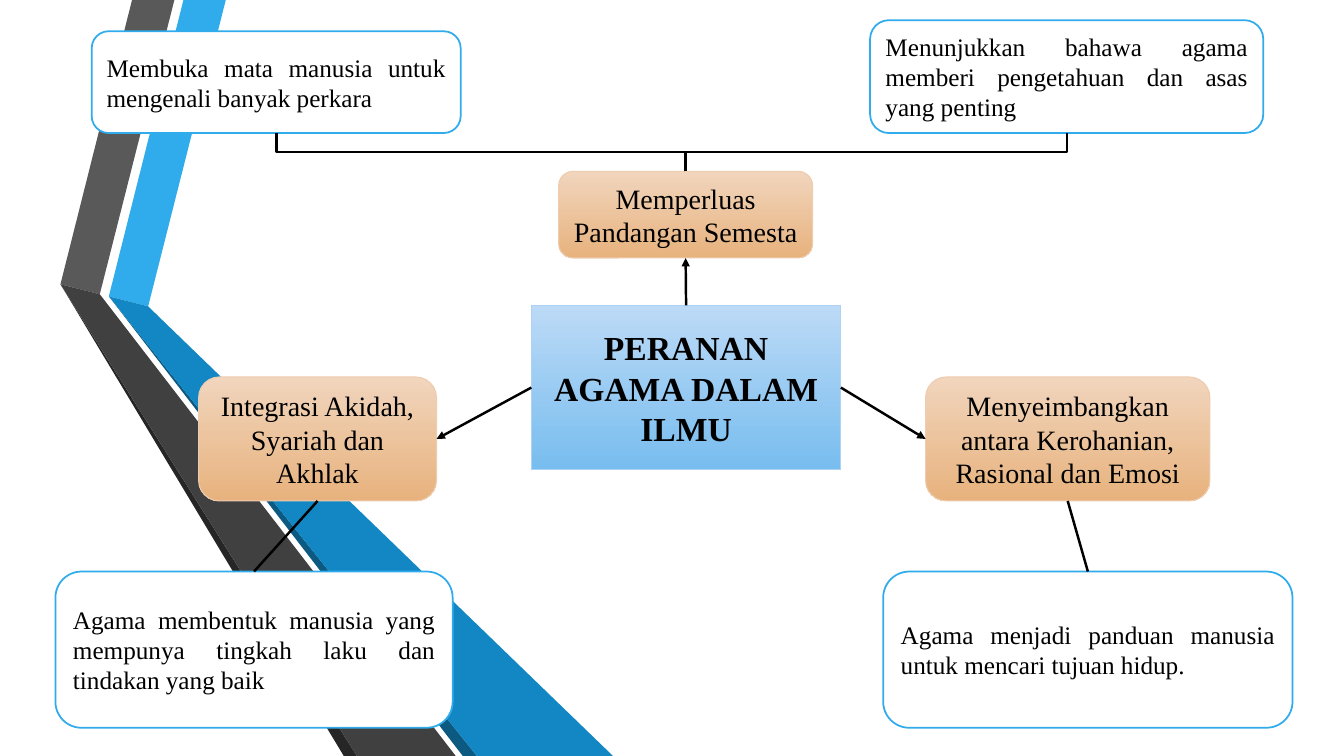
import pptx
import pptx.dml.color
import pptx.enum.shapes
import pptx.enum.text
import pptx.oxml
import pptx.oxml.ns
import pptx.util
import lxml.etree

PX = 9144
SHAPE = pptx.enum.shapes.MSO_SHAPE
LINK = pptx.enum.shapes.MSO_CONNECTOR
ALIGN = pptx.enum.text.PP_ALIGN
TOP, LEFT, BOTTOM, RIGHT = range(4)
BLACK = "000000"

RIBBONS = [
    ("30ACEC", [(108, 294), (147, 304), (224, 0), (182, 0)]),
    ("595959", [(99, 292), (173, 0), (131, 0), (60, 282)]),
    ("262626", [(60, 282), (341, 750), (354, 750)]),
    ("0C5A82", [(473, 750), (108, 294), (459, 750)]),
    ("1287C3", [(108, 294), (473, 750), (608, 750), (147, 304)]),
    ("404040", [(452, 750), (106, 301), (99, 292), (60, 282), (354, 750)]),
]

STYLES = {
    "title": {"fills": ("BCDAF6", "78BDEF"), "line": "AED2F4", "width": 0.75,
              "align": ALIGN.CENTER, "size": 24, "bold": True},
    "role": {"fills": ("F1D5BD", "E7B27D"), "line": "EECCAF", "width": 0.75,
             "align": ALIGN.CENTER, "size": 20, "bold": False},
    "detail": {"fills": ("FFFFFF",), "line": "30ACEC", "width": 1.25,
               "align": ALIGN.JUSTIFY, "size": 18, "bold": False},
}

BRANCHES = [
    ("Memperluas Pandangan Semesta", (554, 170, 252, 86), TOP, BOTTOM, TOP, BOTTOM, [
        ("Membuka mata manusia untuk mengenali banyak perkara", (91, 31, 366, 101)),
        ("Menunjukkan bahawa agama memberi pengetahuan dan asas yang penting",
         (863, 20, 390, 112)),
    ]),
    ("Integrasi Akidah, Syariah dan Akhlak", (197, 374, 236, 123), LEFT, RIGHT, BOTTOM, TOP, [
        ("Agama membentuk manusia yang mempunya tingkah laku dan tindakan yang baik",
         (55, 567, 394, 155)),
    ]),
    ("Menyeimbangkan antara Kerohanian, Rasional dan Emosi", (918, 374, 282, 123),
     RIGHT, LEFT, BOTTOM, TOP, [
        ("Agama menjadi panduan manusia untuk mencari tujuan hidup.", (876, 567, 406, 155)),
    ]),
]


def rgb(code):
    """Turn a hex string into a colour."""
    return pptx.dml.color.RGBColor.from_string(code)


def apply(obj, values):
    """Set every attribute named in a dict."""
    for name, value in values.items():
        setattr(obj, name, value)


def paint(sp, fills, line=None, width=0):
    """Fill a shape with one colour or a vertical gradient, and outline it."""
    if len(fills) == 1:
        sp.fill.solid()
        sp.fill.fore_color.rgb = rgb(fills[0])
    else:
        sp.fill.gradient()
        sp.fill.gradient_angle = 270
        for stop, code in zip(sp.fill.gradient_stops, fills):
            stop.color.rgb = rgb(code)
    if line:
        sp.line.color.rgb = rgb(line)
        sp.line.width = pptx.util.Pt(width)
    else:
        sp.line.fill.background()


def write(sp, text, style):
    """Put one styled paragraph in a shape."""
    tf = sp.text_frame
    apply(tf, {"word_wrap": True, "auto_size": pptx.enum.text.MSO_AUTO_SIZE.NONE,
               "vertical_anchor": pptx.enum.text.MSO_ANCHOR.MIDDLE})
    p = tf.paragraphs[0]
    apply(p, {"alignment": style["align"], "line_spacing": 1.0})
    r = p.add_run()
    r.text = text
    apply(r.font, {"name": "Times New Roman", "size": pptx.util.Pt(style["size"]),
                   "bold": style["bold"]})
    r.font.color.rgb = rgb(BLACK)


def decorate(sp, text, style):
    """Give a box its paint and its text."""
    paint(sp, style["fills"], style["line"], style["width"])
    write(sp, text, style)
    return sp


def add_ribbons(s):
    """Draw the folded ribbons on the left side."""
    for code, points in RIBBONS:
        fb = s.shapes.build_freeform(*points[0], scale=PX)
        fb.add_line_segments(points[1:], close=True)
        sp = fb.convert_to_shape()
        sp.shadow.inherit = False
        paint(sp, (code,))


def add_title(s, text, box):
    """Shape the title placeholder as the central document box."""
    sp = s.shapes.title
    apply(sp, dict(zip(("left", "top", "width", "height"), (v * PX for v in box))))
    geom = pptx.oxml.parse_xml(
        '<a:prstGeom %s prst="flowChartDocument"><a:avLst/></a:prstGeom>'
        % pptx.oxml.ns.nsdecls("a"))
    sp._element.spPr.insert(1, geom)
    return decorate(sp, text, STYLES["title"])


def add_box(s, text, box, style):
    """Add a rounded box with text."""
    sp = s.shapes.add_shape(SHAPE.ROUNDED_RECTANGLE, *(v * PX for v in box))
    sp.shadow.inherit = False
    return decorate(sp, text, STYLES[style])


def stand_upright(cxn):
    """Turn an elbow so that it leaves and arrives vertically."""
    dx, dy = cxn.end_x - cxn.begin_x, cxn.end_y - cxn.begin_y
    mid_x, mid_y = cxn.begin_x + dx // 2, cxn.begin_y + dy // 2
    w, h = abs(dy), abs(dx)
    apply(cxn, {"left": mid_x - w // 2, "top": mid_y - h // 2, "width": w, "height": h,
                "rotation": 90 if dx > 0 else 270})
    xfrm = cxn._element.spPr.find(pptx.oxml.ns.qn("a:xfrm"))
    xfrm.set("flipH", "1" if dx > 0 else "0")
    xfrm.set("flipV", "1")


def connect(s, start, start_site, end, end_site, kind=LINK.STRAIGHT, arrow=False):
    """Link two boxes at the given sides."""
    cxn = s.shapes.add_connector(kind, 0, 0, 0, 0)
    cxn.begin_connect(start, start_site)
    cxn.end_connect(end, end_site)
    if kind == LINK.ELBOW:
        stand_upright(cxn)
    cxn.line.color.rgb = rgb(BLACK)
    cxn.line.width = pptx.util.Pt(1.75)
    spPr = cxn._element.spPr
    if arrow:
        ln = spPr.find(pptx.oxml.ns.qn("a:ln"))
        lxml.etree.SubElement(ln, pptx.oxml.ns.qn("a:tailEnd")).set("type", "triangle")
    lxml.etree.SubElement(spPr, pptx.oxml.ns.qn("a:effectLst"))


def add_branch(s, title, text, box, out, into, down, up, details):
    """Add a role box with its arrow from the title and its detail boxes."""
    role = add_box(s, text, box, "role")
    connect(s, title, out, role, into, arrow=True)
    kind = LINK.ELBOW if len(details) > 1 else LINK.STRAIGHT
    for words, place in details:
        connect(s, role, down, add_box(s, words, place, "detail"), up, kind)


def main():
    """Build the slide and save it."""
    prs = pptx.Presentation()
    apply(prs, {"slide_width": 1333 * PX, "slide_height": 750 * PX})
    s = prs.slides.add_slide(prs.slide_layouts[5])
    add_ribbons(s)
    title = add_title(s, "PERANAN AGAMA DALAM ILMU", (527, 303, 307, 163))
    for branch in BRANCHES:
        add_branch(s, title, *branch)
    prs.save("out.pptx")


if __name__ == "__main__":
    main()
